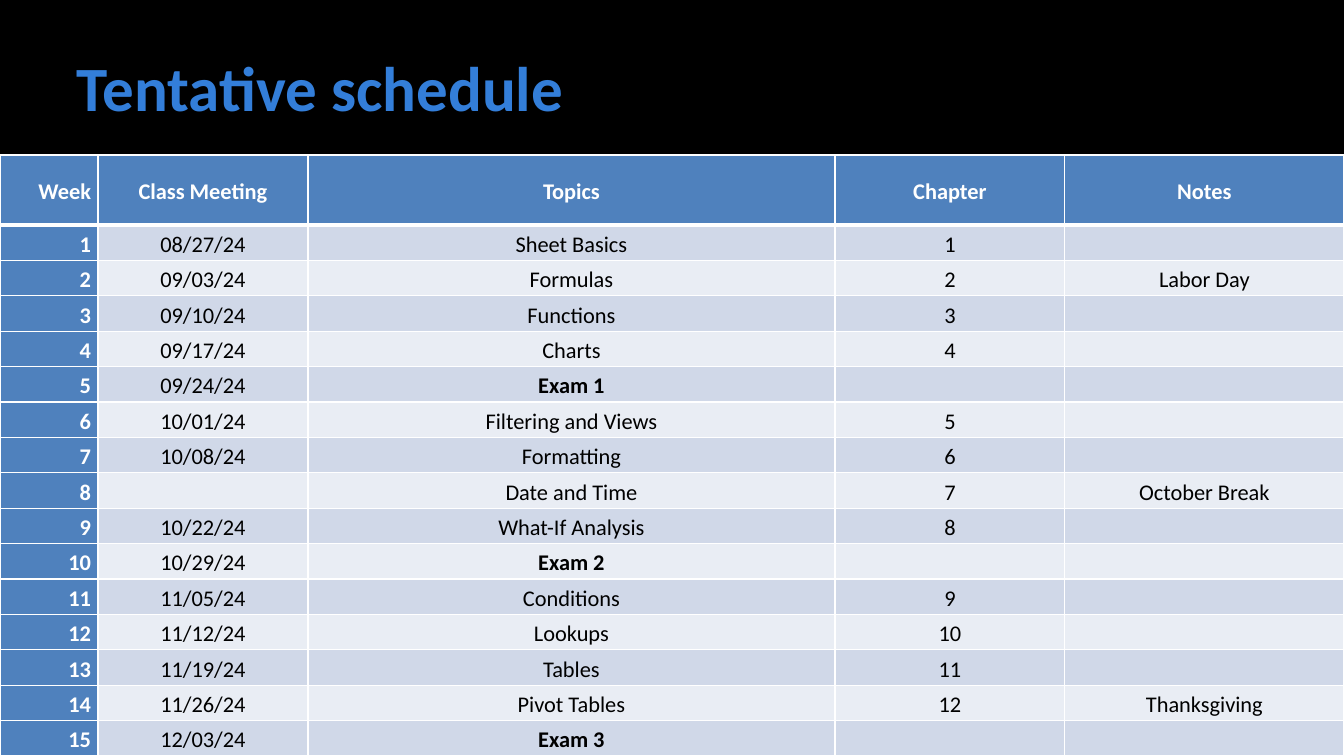
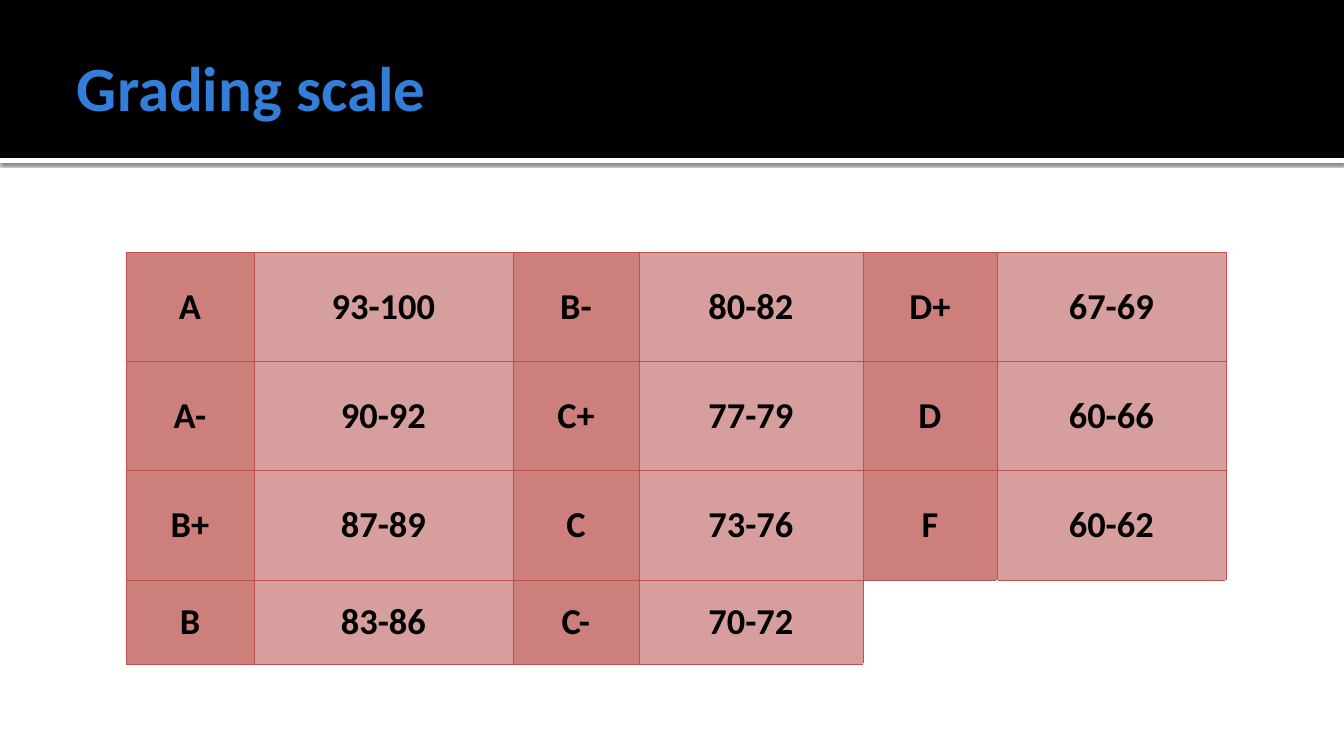
from dataclasses import dataclass

from lxml import etree
from pptx import Presentation
from pptx.dml.color import RGBColor
from pptx.enum import shapes, text
from pptx.oxml import ns, parse_xml
from pptx.util import Emu, Pt

PX = 12192000 / 1344
SLIDE_W, SLIDE_H = 1344, 756
BAND_H, RULE_H = 158, 5
TITLE_BOX = (67, 17, 1210, 138)
TITLE_INSETS = (10, 5, 5, 5)


@dataclass(frozen=True)
class Theme:
    font: str = "Calibri"
    black: str = "000000"
    white: str = "FFFFFF"
    title: str = "337ED9"
    head: str = "4F81BD"
    odd_row: str = "D0D8E8"
    even_row: str = "E9EDF4"
    grade_line: str = "C0504D"
    letter: str = "CD7F7C"
    score: str = "D69E9C"
    title_pt: int = 45
    schedule_pt: int = 16
    grade_pt: int = 26


THEME = Theme()

SCHEDULE_TITLE = "Tentative schedule"
SCHEDULE_HEAD = ("Week", "Class Meeting", "Topics", "Chapter", "Notes")
SCHEDULE = [
    ("08/27/24", "Sheet Basics", "1", ""),
    ("09/03/24", "Formulas", "2", "Labor Day"),
    ("09/10/24", "Functions", "3", ""),
    ("09/17/24", "Charts", "4", ""),
    ("09/24/24", "Exam 1", "", ""),
    ("10/01/24", "Filtering and Views", "5", ""),
    ("10/08/24", "Formatting", "6", ""),
    ("", "Date and Time", "7", "October Break"),
    ("10/22/24", "What-If Analysis", "8", ""),
    ("10/29/24", "Exam 2", "", ""),
    ("11/05/24", "Conditions", "9", ""),
    ("11/12/24", "Lookups", "10", ""),
    ("11/19/24", "Tables", "11", ""),
    ("11/26/24", "Pivot Tables", "12", "Thanksgiving"),
    ("12/03/24", "Exam 3", "", ""),
]
SCHEDULE_TOP, SCHEDULE_HEAD_H = 155, 70
SCHEDULE_COLS = (98, 210, 527, 230, 279)

GRADING_TITLE = "Grading scale"
GRADES = [
    ("A", "93-100", "B-", "80-82", "D+", "67-69"),
    ("A-", "90-92", "C+", "77-79", "D", "60-66"),
    ("B+", "87-89", "C", "73-76", "F", "60-62"),
    ("B", "83-86", "C-", "70-72", "", ""),
]
GRADES_AT = (126, 252)
GRADE_COLS = (128, 259, 126, 224, 134, 229)
GRADES_H, LAST_GRADE_H = 412, 84


def px(length):
    return Emu(round(length * PX))


def rgb(color):
    return RGBColor.from_string(color)


def style_font(paragraph, size, color, bold):
    for run in paragraph.runs:
        run.font.name = THEME.font
        run.font.size = Pt(size)
        run.font.bold = bold
        run.font.color.rgb = rgb(color)


def set_insets(frame, insets):
    frame.margin_left, frame.margin_top, frame.margin_right, frame.margin_bottom = map(px, insets)


def add_bar(slide, top, height, color):
    bar = slide.shapes.add_shape(
        shapes.MSO_SHAPE.RECTANGLE, 0, px(top), px(SLIDE_W), px(height))
    bar.shadow.inherit = False
    bar.fill.solid()
    bar.fill.fore_color.rgb = rgb(color)
    bar.line.fill.background()
    return bar


def move_bands_to_layout(slide, layout):
    rule = add_bar(slide, BAND_H, RULE_H, THEME.white)
    effects = rule.element.spPr.find(ns.qn("a:effectLst"))
    effects.append(parse_xml(
        f'<a:outerShdw {ns.nsdecls("a")} blurRad="{Pt(2.5)}" dist="{Pt(0.8)}" '
        f'dir="5400000" algn="t" rotWithShape="0"><a:srgbClr val="{THEME.black}">'
        '<a:alpha val="60000"/></a:srgbClr></a:outerShdw>'))
    band = add_bar(slide, 0, BAND_H, THEME.black)
    for index, bar in enumerate((rule, band), start=2):
        layout.shapes.element.insert(index, bar.element)


def add_titled_slide(deck, layout, wording):
    slide = deck.slides.add_slide(layout)
    title = slide.shapes.title
    title.left, title.top, title.width, title.height = map(px, TITLE_BOX)
    frame = title.text_frame
    frame.text = wording
    frame.word_wrap = True
    frame.auto_size = text.MSO_AUTO_SIZE.NONE
    frame.vertical_anchor = text.MSO_ANCHOR.MIDDLE
    set_insets(frame, TITLE_INSETS)
    frame.paragraphs[0].alignment = text.PP_ALIGN.LEFT
    style_font(frame.paragraphs[0], THEME.title_pt, THEME.title, True)
    return slide


def add_grid(slide, left, top, cols, rows):
    grid = slide.shapes.add_table(
        len(rows), len(cols), px(left), px(top), px(sum(cols)), px(sum(rows))).table
    grid.first_row = grid.horz_banding = False
    for column, width in zip(grid.columns, cols):
        column.width = px(width)
    for row, height in zip(grid.rows, rows):
        row.height = px(height)
    return grid


def set_borders(cell, color, widths):
    properties = cell._tc.get_or_add_tcPr()
    for side in "LRTB":
        if side in widths:
            line = etree.SubElement(
                properties, ns.qn(f"a:ln{side}"), w=str(Pt(widths[side])))
            fill = etree.SubElement(line, ns.qn("a:solidFill"))
            etree.SubElement(fill, ns.qn("a:srgbClr"), val=color)


def fill_cell(cell, wording, fill, size, color, bold, inset,
              align=text.PP_ALIGN.CENTER, spacing=None):
    cell.fill.solid()
    cell.fill.fore_color.rgb = rgb(fill)
    cell.vertical_anchor = text.MSO_ANCHOR.MIDDLE
    set_insets(cell, (inset, 0, inset, 0))
    if wording:
        cell.text_frame.text = wording
        paragraph = cell.text_frame.paragraphs[0]
        paragraph.alignment = align
        paragraph.line_spacing = spacing
        style_font(paragraph, size, color, bold)


def add_schedule(slide):
    row_h = (SLIDE_H - SCHEDULE_TOP - SCHEDULE_HEAD_H) / len(SCHEDULE)
    heights = [SCHEDULE_HEAD_H] + [row_h] * len(SCHEDULE)
    grid = add_grid(slide, 0, SCHEDULE_TOP, SCHEDULE_COLS, heights)
    weeks = [(str(week), *entry) for week, entry in enumerate(SCHEDULE, start=1)]
    for r, entries in enumerate([SCHEDULE_HEAD, *weeks]):
        for c, wording in enumerate(entries):
            cell = grid.cell(r, c)
            heading = r == 0 or c == 0
            row_fill = THEME.odd_row if r % 2 else THEME.even_row
            set_borders(cell, THEME.white,
                        {"L": 1, "R": 1, "T": 3 if r == 1 else 1, "B": 3 if r == 0 else 1})
            fill_cell(cell, wording, THEME.head if heading else row_fill,
                      THEME.schedule_pt, THEME.white if heading else THEME.black,
                      heading or wording.startswith("Exam"), 7,
                      text.PP_ALIGN.CENTER if c else text.PP_ALIGN.RIGHT, 1.15)


def add_grades(slide):
    full_rows = len(GRADES) - 1
    heights = [(GRADES_H - LAST_GRADE_H) / full_rows] * full_rows + [LAST_GRADE_H]
    grid = add_grid(slide, *GRADES_AT, GRADE_COLS, heights)
    for r, entries in enumerate(GRADES):
        for c, wording in enumerate(entries):
            cell = grid.cell(r, c)
            if wording:
                sides, fill = "LRTB", THEME.score if c % 2 else THEME.letter
            else:
                sides, fill = "LT" if entries[c - 1] else "T", THEME.white
            set_borders(cell, THEME.grade_line, dict.fromkeys(sides, 0.5))
            fill_cell(cell, wording, fill, THEME.grade_pt, THEME.black, True, 6)


def main():
    deck = Presentation()
    deck.slide_width, deck.slide_height = px(SLIDE_W), px(SLIDE_H)
    layout = deck.slide_layouts.get_by_name("Title Only")
    schedule = add_titled_slide(deck, layout, SCHEDULE_TITLE)
    move_bands_to_layout(schedule, layout)
    add_schedule(schedule)
    add_grades(add_titled_slide(deck, layout, GRADING_TITLE))
    deck.save("out.pptx")


if __name__ == "__main__":
    main()
